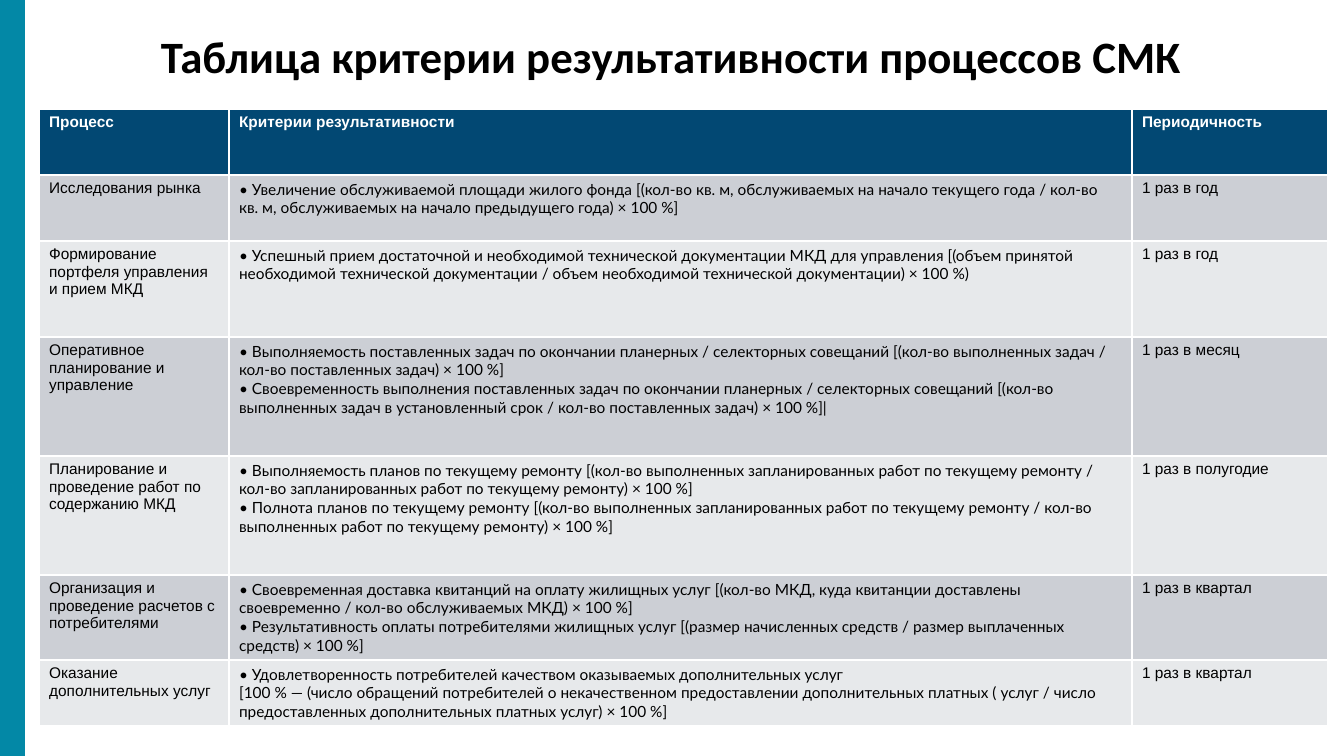
from pptx import Presentation
from pptx.dml.color import RGBColor
from pptx.enum.shapes import MSO_SHAPE
from pptx.enum.text import MSO_ANCHOR, MSO_AUTO_SIZE, PP_ALIGN
from pptx.util import Pt

RECT = MSO_SHAPE.RECTANGLE
BOTTOM = MSO_ANCHOR.BOTTOM
CENTER = PP_ALIGN.CENTER
FIXED = MSO_AUTO_SIZE.NONE

TITLE = "Таблица критерии результативности процессов СМК "
HEADS = ("Процесс", "Критерии результативности", "Периодичность")
# process, criteria (one paragraph each), frequency
ROWS = [
    ("Исследования рынка",
     ["• Увеличение обслуживаемой площади жилого фонда [(кол-во кв. м, обслуживаемых на начало "
      "текущего года / кол-во кв. м, обслуживаемых на начало предыдущего года) × 100 %]"],
     "1 раз в год"),
    ("Формирование портфеля управления и прием МКД",
     ["• Успешный прием достаточной и необходимой технической документации МКД для управления "
      "[(объем принятой необходимой технической документации / объем необходимой технической "
      "документации) × 100 %)"],
     "1 раз в год"),
    ("Оперативное планирование и управление",
     ["• Выполняемость поставленных задач по окончании планерных / селекторных совещаний "
      "[(кол-во выполненных задач / кол-во поставленных задач) × 100 %]",
      "• Своевременность выполнения поставленных задач по окончании планерных / селекторных "
      "совещаний [(кол-во выполненных задач в установленный срок / кол-во поставленных задач) "
      "× 100 %]|"],
     "1 раз в месяц"),
    ("Планирование и проведение работ по содержанию МКД",
     ["• Выполняемость планов по текущему ремонту [(кол-во выполненных запланированных работ по "
      "текущему ремонту / кол-во запланированных работ по текущему ремонту) × 100 %]",
      "• Полнота планов по текущему ремонту [(кол-во выполненных запланированных работ по "
      "текущему ремонту / кол-во выполненных работ по текущему ремонту) × 100 %]"],
     "1 раз в полугодие"),
    ("Организация и проведение расчетов с потребителями",
     ["• Своевременная доставка квитанций на оплату жилищных услуг [(кол-во МКД, куда квитанции "
      "доставлены своевременно / кол-во обслуживаемых МКД) × 100 %]",
      "• Результативность оплаты потребителями жилищных услуг [(размер начисленных средств / "
      "размер выплаченных средств) × 100 %]"],
     "1 раз в квартал"),
    ("Оказание дополнительных услуг",
     ["• Удовлетворенность потребителей качеством оказываемых дополнительных услуг",
      "[100 % — (число обращений потребителей о некачественном предоставлении дополнительных "
      "платных ( услуг / число предоставленных дополнительных платных услуг) × 100 %]"],
     "1 раз в квартал"),
]
WIDTHS = (190, 903, 196)
HEIGHTS = (66, 66, 96, 119, 119, 85, 66)
COLORS = {"bar": "0388A6", "head": "024873", "odd": "CCCFD5", "even": "E7E9EB",
          "white": "FFFFFF", "black": "000000"}


def px(n):
    return round(n * 914400 / 100.8)


def paint(fill, color):
    fill.solid()
    fill.fore_color.rgb = RGBColor.from_string(COLORS[color])


def write(frame, lines, font="Arial", size=11, color="black", bold=False,
          align=None, spacing=None):
    for i, line in enumerate(lines):
        para = frame.add_paragraph() if i else frame.paragraphs[0]
        para.alignment = align
        para.line_spacing = spacing
        run = para.add_run()
        run.text = line
        run.font.name = font
        run.font.size = Pt(size)
        run.font.bold = bold
        run.font.color.rgb = RGBColor.from_string(COLORS[color])


def add_bar(slide):
    bar = slide.shapes.add_shape(RECT, 0, 0, px(25), px(756))
    bar.shadow.inherit = False
    paint(bar.fill, "bar")
    bar.line.fill.background()


def add_title(slide):
    title = slide.shapes.title
    title.left, title.top, title.width, title.height = map(px, (66, 17, 1221, 71))
    frame = title.text_frame
    frame.auto_size = FIXED
    frame.vertical_anchor = BOTTOM
    write(frame, [TITLE], font="Calibri", size=32, bold=True, align=CENTER, spacing=0.9)


def add_grid(slide):
    table = slide.shapes.add_table(len(HEIGHTS), len(WIDTHS), px(39), px(109),
                                   px(sum(WIDTHS)), px(sum(HEIGHTS))).table
    for col, width in zip(table.columns, WIDTHS):
        col.width = px(width)
    for row, height in zip(table.rows, HEIGHTS):
        row.height = px(height)
    for c, head in enumerate(HEADS):
        cell = table.cell(0, c)
        paint(cell.fill, "head")
        write(cell.text_frame, [head], color="white", bold=True)
    for r, (process, criteria, period) in enumerate(ROWS, 1):
        for c, lines in enumerate(([process], criteria, [period])):
            cell = table.cell(r, c)
            paint(cell.fill, "odd" if r % 2 else "even")
            write(cell.text_frame, lines, font="Lato" if c == 1 else "Arial")


def main():
    deck = Presentation()
    deck.slide_width, deck.slide_height = px(1344), px(756)
    slide = deck.slides.add_slide(deck.slide_layouts[5])
    add_bar(slide)
    add_title(slide)
    add_grid(slide)
    deck.save("out.pptx")


if __name__ == "__main__":
    main()
